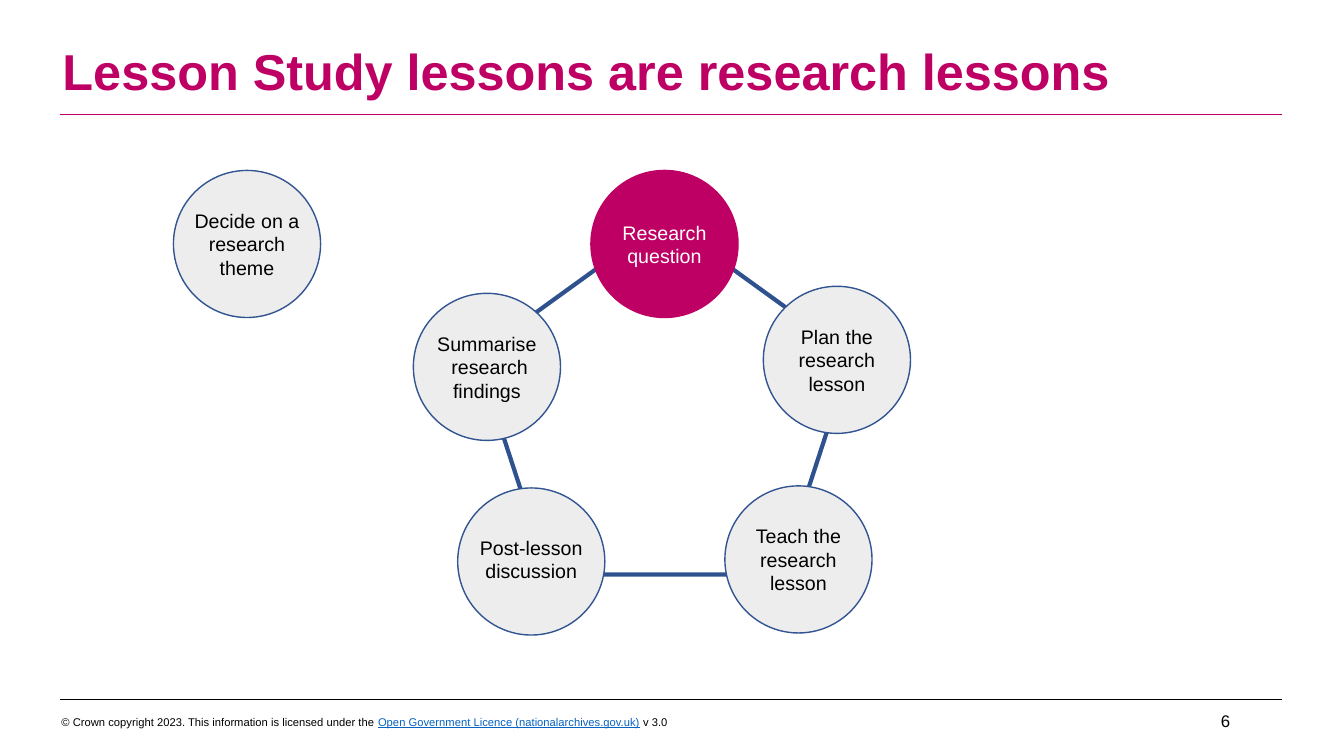
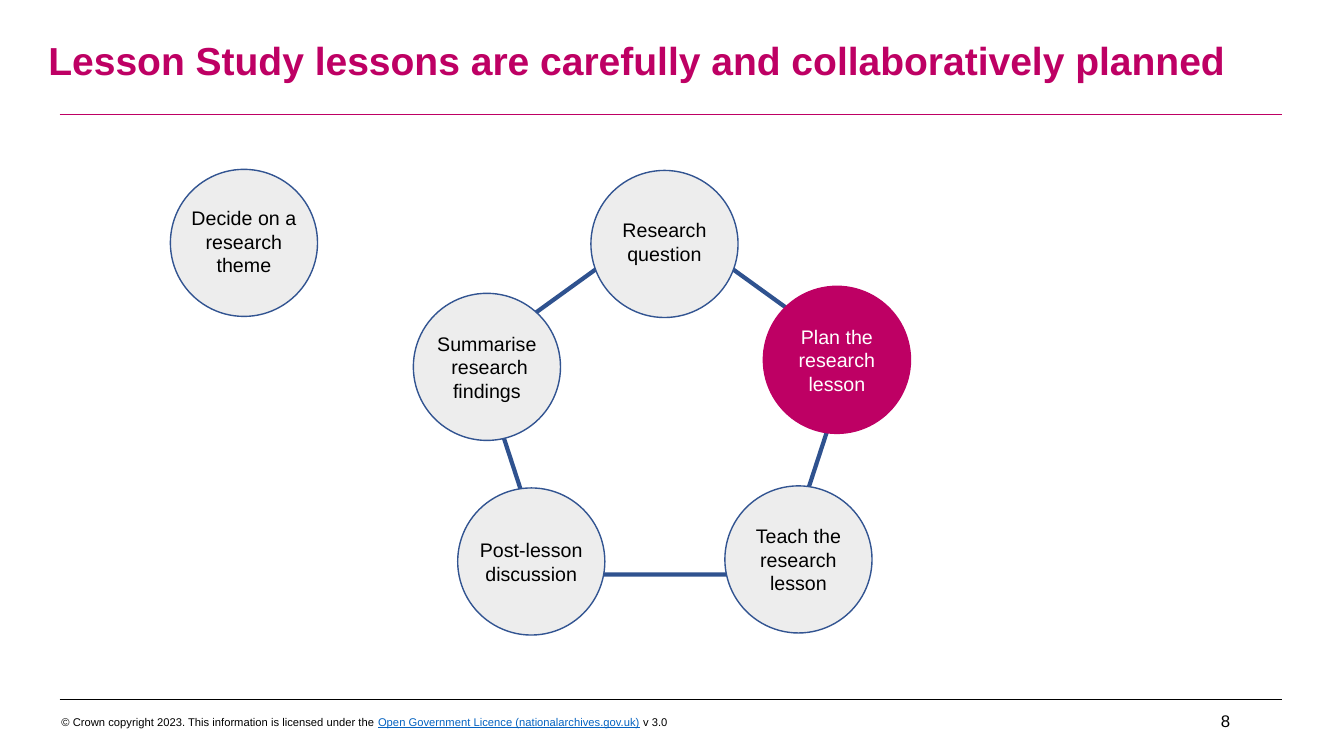
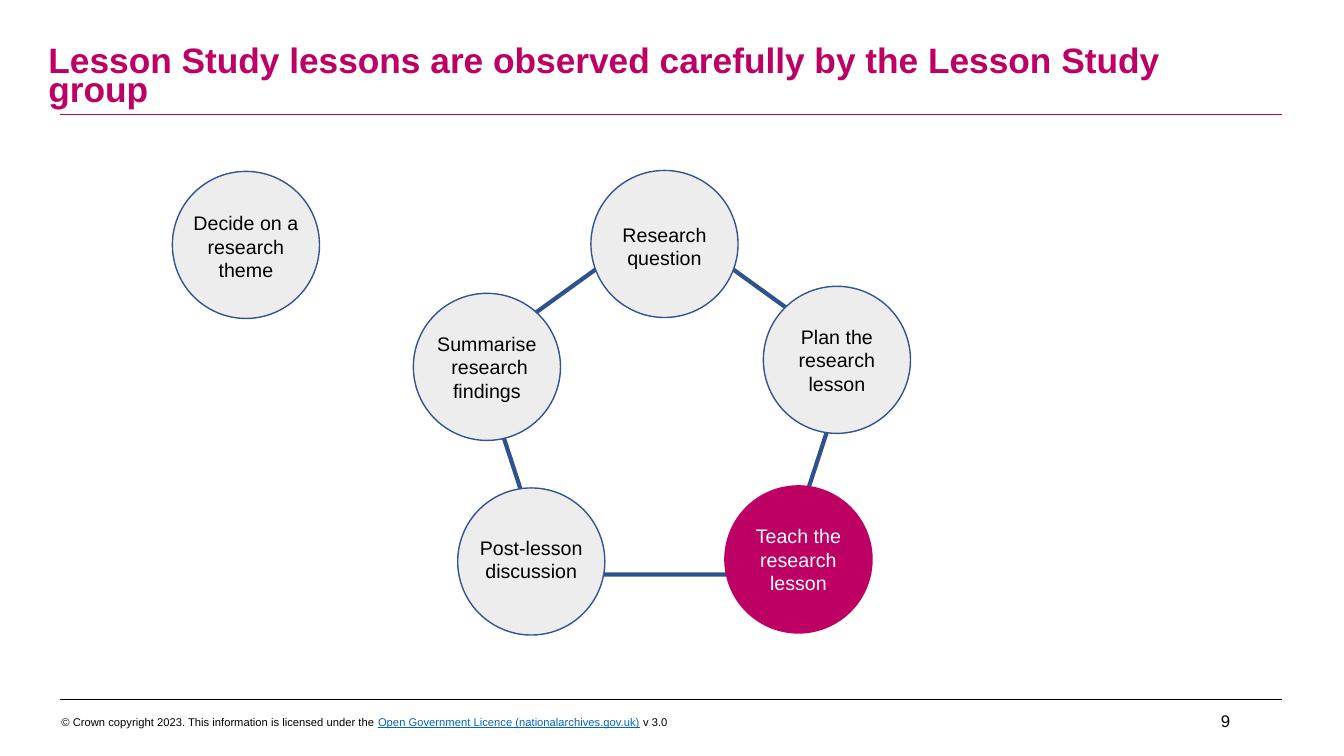
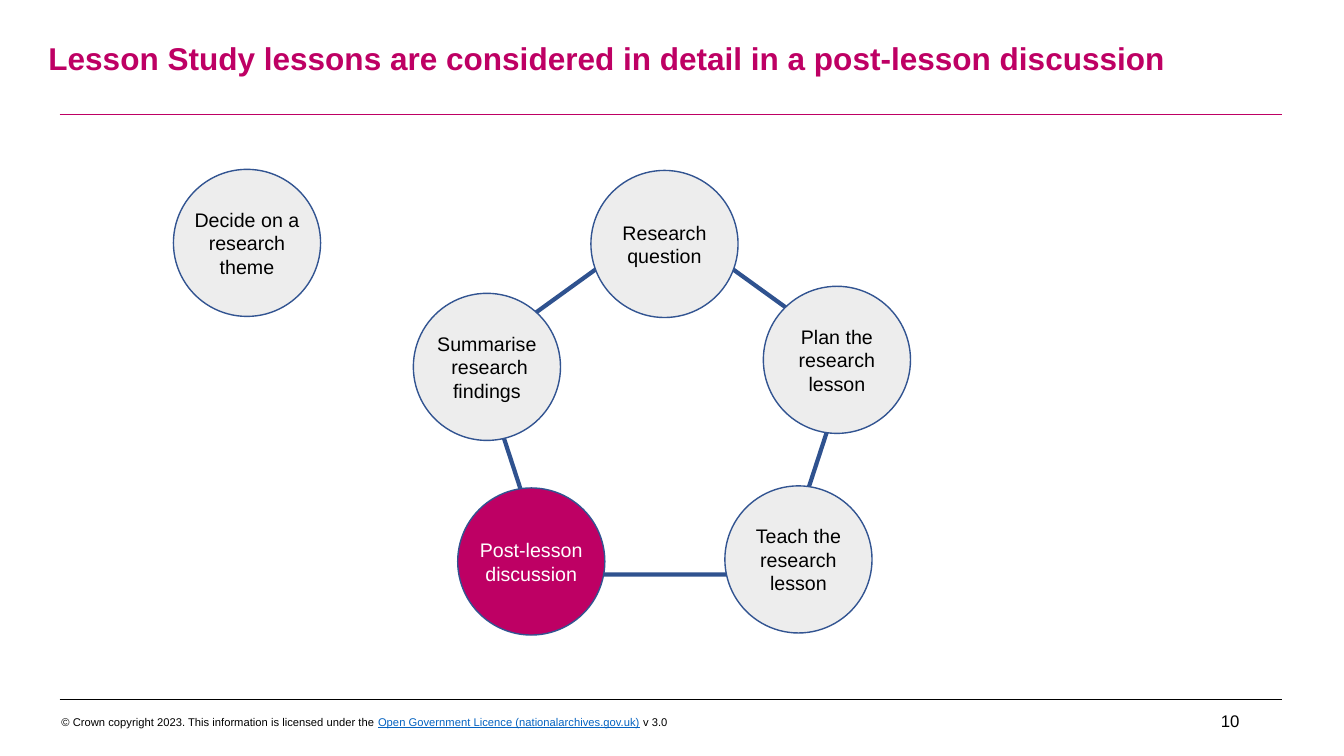
from dataclasses import dataclass, field

from lxml.etree import SubElement
from pptx import Presentation
from pptx.dml.color import RGBColor
from pptx.enum.shapes import MSO_CONNECTOR as Conn, MSO_SHAPE as Kind
from pptx.enum.text import MSO_ANCHOR as Anchor, MSO_AUTO_SIZE as Fit, PP_ALIGN as Align
from pptx.oxml.ns import qn
from pptx.util import Inches, Pt

PINK = RGBColor(0xBE, 0x00, 0x64)
GREY = RGBColor(0xED, 0xED, 0xED)
BLUE = RGBColor(0x32, 0x54, 0x91)
NAVY = RGBColor(0x2F, 0x52, 0x8F)
LINK = RGBColor(0x05, 0x63, 0xC1)
BLACK = RGBColor(0, 0, 0)
WHITE = RGBColor(0xFF, 0xFF, 0xFF)

FONT = "Arial"
WIDTH, HEIGHT = Inches(13.33), Inches(7.5)
TITLE_ONLY = 5


def wide(share: float) -> int:
    """Turn a percentage of the slide's width into a length."""
    return round(WIDTH * share / 100)


def high(share: float) -> int:
    """Turn a percentage of the slide's height into a length."""
    return round(HEIGHT * share / 100)


@dataclass(frozen=True)
class Box:
    """A frame in percentages of the slide's size."""
    left: float
    top: float
    width: float
    height: float

    def frame(self) -> tuple[int, int, int, int]:
        return wide(self.left), high(self.top), wide(self.width), high(self.height)


@dataclass(frozen=True)
class Step:
    """A circle by its centre, with its label and the lines it fills."""
    x: float
    y: float
    text: str
    lines: int = 3


@dataclass(frozen=True)
class Page:
    number: int
    title: str
    size: float
    active: Step
    theme: tuple[float, float]
    box: Box = Box(2.85, 5.87, 92.27, 8.8)
    spacing: float = 0.7
    edge: RGBColor = PINK
    nudge: dict[str, float] = field(default_factory=dict)


ROUND = wide(10.95)
RING = Box(35.48, 29.07, 27.91, 46.93)
NUMBER = Box(90.1, 93.33, 4.35, 4)
LICENCE = Box(3.83, 93.47, 63.09, 4)
RULES = ((92.53, BLACK), (15.2, PINK))
CREDIT = (
    ("© Crown copyright 2023. This information is licensed under the ", BLACK, False),
    ("Open Government Licence (nationalarchives.gov.uk)", LINK, True),
    (" v 3.0", BLACK, False),
)

ASK = Step(49.44, 32.27, "Research question", 2)
PLAN = Step(62.27, 47.6, "Plan the research lesson")
TEACH = Step(59.41, 74, "Teach the research lesson")
TALK = Step(39.53, 74.27, "Post-lesson discussion", 2)
SUM_UP = Step(36.23, 48.53, "Summarise\n research findings")
CYCLE = (ASK, PLAN, TEACH, TALK, SUM_UP)
THEME = "Decide on a research theme"

PAGES = (
    Page(6, "Lesson Study lessons are research lessons", 36, ASK, (18.38, 32.27),
         box=Box(3.9, 5.6, 79.52, 8.8), spacing=0.9, nudge={TALK.text: -0.33}),
    Page(8, "Lesson Study lessons are carefully and collaboratively planned", 27.9,
         PLAN, (18.15, 32.13), nudge={ASK.text: -0.27, THEME: -0.2}),
    Page(9, "Lesson Study lessons are observed carefully by the Lesson Study group", 25.2,
         TEACH, (18.3, 32.4), nudge={ASK.text: 0.27, TALK.text: -0.33, THEME: 0.2}),
    Page(10, "Lesson Study lessons are considered in detail in a post-lesson discussion", 22.5,
         TALK, (18.38, 32.13), edge=BLUE),
)


def style(font, size: float, color: RGBColor) -> None:
    font.name, font.size = FONT, Pt(size)
    font.color.rgb = color


def add_text(slide, frame: tuple[int, int, int, int], text: str, size: float,
             color: RGBColor, align=Align.LEFT):
    body = slide.shapes.add_textbox(*frame).text_frame
    body.word_wrap = True
    body.vertical_anchor = Anchor.MIDDLE
    body.text = text
    for para in body.paragraphs:
        para.alignment = align
        style(para.font, size, color)
    return body


def add_rules(slide) -> None:
    """Draw the two rules and hand them to the layout all slides share."""
    for y, color in RULES:
        rule = slide.shapes.add_connector(
            Conn.STRAIGHT, wide(4.43), high(y), wide(95.42), high(y))
        rule.line.color.rgb = color
        rule.line.width = Pt(0.75)
        SubElement(rule.element.spPr, qn("a:effectLst"))
        slide.slide_layout.shapes.element.append(rule.element)


def add_title(slide, page: Page) -> None:
    title = slide.shapes.title
    title.left, title.top, title.width, title.height = page.box.frame()
    body = title.text_frame
    body.text = page.title
    body.word_wrap = True
    body.auto_size = Fit.NONE
    body.vertical_anchor = Anchor.TOP
    para = body.paragraphs[0]
    para.alignment = Align.LEFT
    para.line_spacing = page.spacing
    style(para.font, page.size, PINK)
    para.font.bold = True


def add_ring(slide) -> None:
    ring = slide.shapes.add_shape(Kind.REGULAR_PENTAGON, *RING.frame())
    ring.shadow.inherit = False
    ring.fill.background()
    ring.line.color.rgb = NAVY
    ring.line.width = Pt(3)


def add_step(slide, step: Step, page: Page) -> None:
    active = step is page.active
    left, mid = wide(step.x) - ROUND // 2, high(step.y)
    disc = slide.shapes.add_shape(Kind.OVAL, left, mid - ROUND // 2, ROUND, ROUND)
    disc.shadow.inherit = False
    disc.fill.solid()
    disc.fill.fore_color.rgb = PINK if active else GREY
    disc.line.color.rgb = page.edge if active else BLUE
    disc.line.width = Pt(1)
    tall = high(1.33 + 3.16 * step.lines)
    top = mid - tall // 2 + high(page.nudge.get(step.text, 0))
    add_text(slide, (left, top, ROUND, tall), step.text, 14,
             WHITE if active else BLACK, Align.CENTER)


def add_footer(slide, number: int) -> None:
    add_text(slide, NUMBER.frame(), str(number), 12, BLACK)
    para = add_text(slide, LICENCE.frame(), "", 8, BLACK).paragraphs[0]
    for text, color, under in CREDIT:
        run = para.add_run()
        run.text = text
        style(run.font, 8, color)
        run.font.underline = under


def main() -> None:
    deck = Presentation()
    deck.slide_width, deck.slide_height = WIDTH, HEIGHT
    layout = deck.slide_layouts[TITLE_ONLY]
    for page in PAGES:
        slide = deck.slides.add_slide(layout)
        if page is PAGES[0]:
            add_rules(slide)
        add_title(slide, page)
        add_ring(slide)
        for step in (*CYCLE, Step(*page.theme, THEME)):
            add_step(slide, step, page)
        add_footer(slide, page.number)
    deck.save("out.pptx")


if __name__ == "__main__":
    main()
